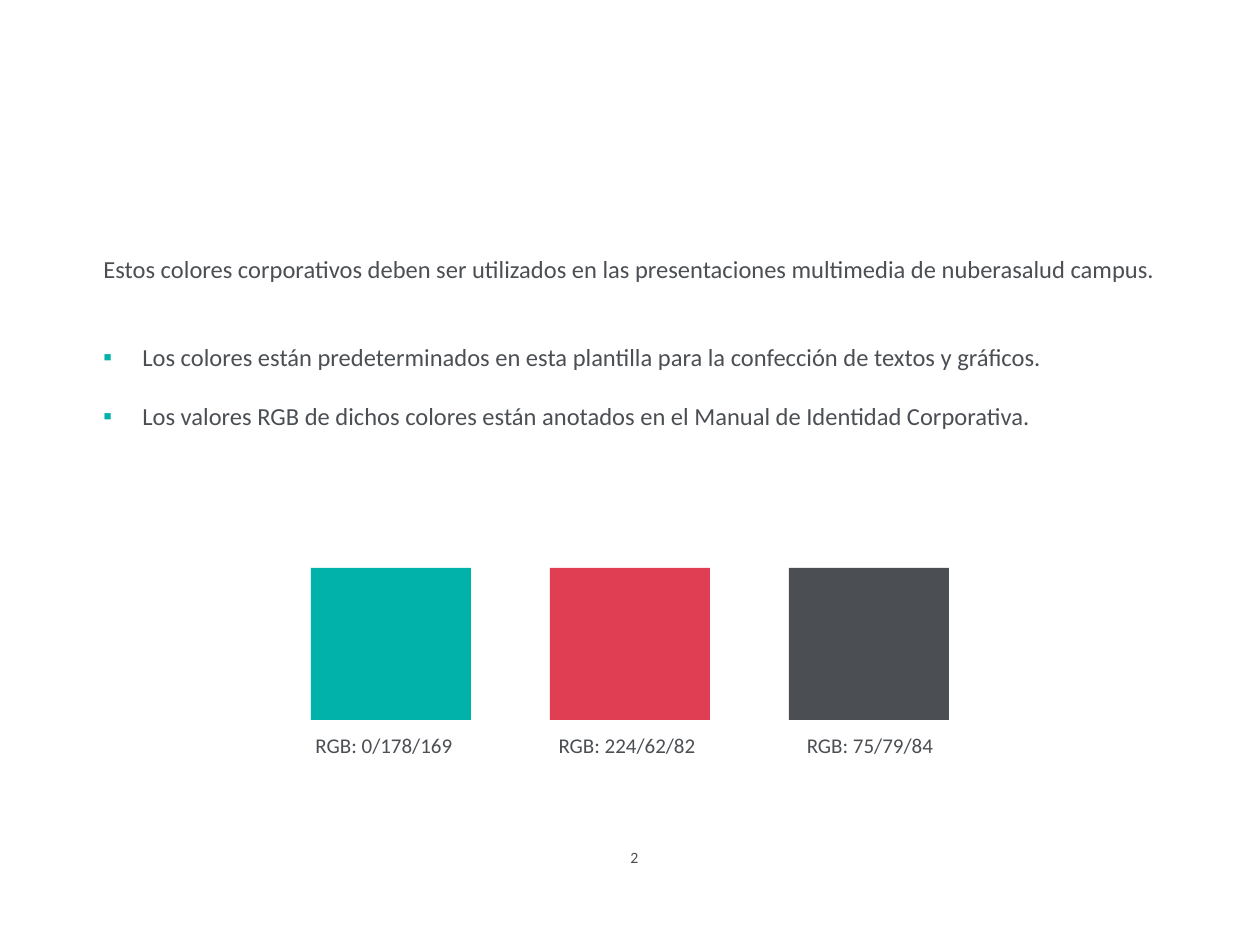
from pptx import Presentation
from pptx.dml.color import RGBColor as Rgb
from pptx.enum.shapes import MSO_SHAPE as Shape
from pptx.enum.text import PP_ALIGN as Align
from pptx.oxml.ns import qn
from pptx.util import Emu, Pt
from lxml.etree import SubElement as Sub

COLORS = {"teal": "00B2A9", "red": "E03E52", "gray": "4B4F54"}
SWATCHES = [
    ("teal", "RGB: 0/178/169"),
    ("red", "RGB: 224/62/82"),
    ("gray", "RGB: 75/79/84"),
]
INTRO = ("Estos colores corporativos deben ser utilizados en las "
         "presentaciones multimedia de nuberasalud campus.")
POINTS = [
    "Los colores están predeterminados en esta plantilla "
    "para la confección de textos y gráficos.",
    "Los valores RGB de dichos colores están anotados "
    "en el Manual de Identidad Corporativa.",
]


def px(n):
    return Emu(round(n * 914400 / 126))


def add_bullet(para):
    props = para._p.get_or_add_pPr()
    props.set("marL", str(px(39)))
    props.set("indent", str(-px(39)))
    color = Sub(props, qn("a:buClr"))
    Sub(color, qn("a:srgbClr"), val=COLORS["teal"])
    Sub(props, qn("a:buFont"), typeface="Calibri")
    Sub(props, qn("a:buChar"), char="▪")


def add_text(slide, box, lines, size, align=Align.LEFT, bullets=False):
    frame = slide.shapes.add_textbox(*map(px, box)).text_frame
    frame.word_wrap = True
    frame.text = "\n".join(lines)
    for i, para in enumerate(frame.paragraphs):
        para.alignment = align
        if i:
            para.space_before = Pt(17)
        if bullets:
            add_bullet(para)
        for run in para.runs:
            run.font.name = "Calibri"
            run.font.size = Pt(size)
            run.font.color.rgb = Rgb.from_string(COLORS["gray"])


def add_swatch(slide, box, color):
    square = slide.shapes.add_shape(Shape.RECTANGLE, *map(px, box))
    square.shadow.inherit = False
    square.fill.solid()
    square.fill.fore_color.rgb = Rgb.from_string(COLORS[color])
    square.line.fill.background()


def main():
    deck = Presentation()
    deck.slide_width, deck.slide_height = px(1260), px(945)
    slide = deck.slides.add_slide(deck.slide_layouts[6])

    # Introduction and bullet points
    add_text(slide, (91, 248, 1113, 43), [INTRO], 14)
    add_text(slide, (91, 336, 1113, 102), POINTS, 14, bullets=True)

    # Colour swatches with their RGB values
    for i, (color, label) in enumerate(SWATCHES):
        add_swatch(slide, (311 + 239 * i, 568, 160, 152), color)
        add_text(slide, (285 + 243 * i, 726, 198, 38), [label], 12, Align.CENTER)

    # Page number
    add_text(slide, (493, 842, 283, 50), ["2"], 9, Align.CENTER)

    deck.save("out.pptx")


if __name__ == "__main__":
    main()
